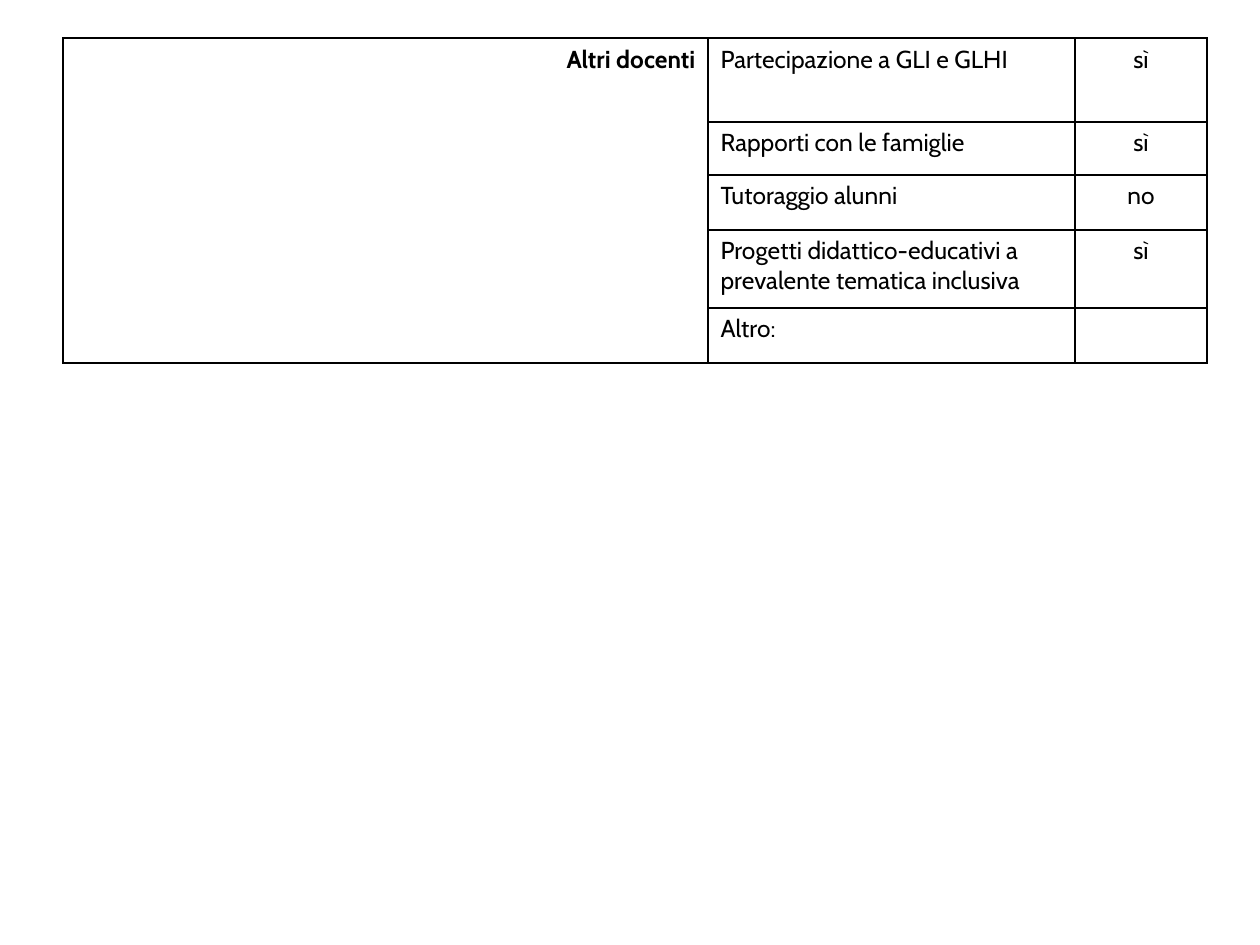
from typing import NamedTuple

from lxml import etree
from pptx import Presentation
from pptx import util as u
from pptx.dml.color import RGBColor
from pptx.enum import text
from pptx.oxml.ns import qn

PX = 914400 // 126  # EMU in one px
INK = "000000"
FONT = "Cabin"
COLUMNS = (645, 367, 132)


class Activity(NamedTuple):
    label: str
    answer: str
    height: int


ACTIVITIES = (
    Activity("Partecipazione a GLI e GLHI", "sì", 84),
    Activity("Rapporti con le famiglie", "sì", 53),
    Activity("Tutoraggio alunni", "no", 55),
    Activity("Progetti didattico-educativi a prevalente tematica inclusiva", "sì", 78),
    Activity("Altro:", "", 55),
)


def px(length: int) -> u.Emu:
    return u.Emu(length * PX)


def color(hex_code: str) -> RGBColor:
    return RGBColor.from_string(hex_code)


def write(cell, words: str, *, align=text.PP_ALIGN.LEFT, bold: bool = False) -> None:
    paragraph = cell.text_frame.paragraphs[0]
    paragraph.alignment = align
    if not words:
        return
    run = paragraph.add_run()
    run.text = words
    run.font.name = FONT
    run.font.size = u.Pt(14)
    run.font.bold = bold
    run.font.color.rgb = color(INK)


def frame(cell) -> None:
    """Clear the fill and rule all four sides of a cell."""
    cell.fill.background()
    properties = cell._tc.get_or_add_tcPr()
    for position, side in enumerate(("lnL", "lnR", "lnT", "lnB")):
        line = etree.Element(qn(f"a:{side}"), w=str(u.Pt(1)))
        fill = etree.SubElement(line, qn("a:solidFill"))
        etree.SubElement(fill, qn("a:srgbClr"), val=INK)
        properties.insert(position, line)


def add_activity_table(slide) -> None:
    height = sum(activity.height for activity in ACTIVITIES)
    table = slide.shapes.add_table(
        len(ACTIVITIES), len(COLUMNS), px(63), px(38), px(sum(COLUMNS)), px(height)
    ).table
    table.first_row = table.horz_banding = False
    for column, width in zip(table.columns, COLUMNS):
        column.width = px(width)
    for cell in table.iter_cells():
        frame(cell)

    # Staff group, spanning all its activities
    group = table.cell(0, 0)
    group.merge(table.cell(len(ACTIVITIES) - 1, 0))
    write(group, "Altri docenti", align=text.PP_ALIGN.RIGHT, bold=True)

    # One row for each activity
    for row, activity in enumerate(ACTIVITIES):
        table.rows[row].height = px(activity.height)
        write(table.cell(row, 1), activity.label)
        write(table.cell(row, 2), activity.answer, align=text.PP_ALIGN.CENTER)


def main() -> None:
    deck = Presentation()
    deck.slide_width, deck.slide_height = px(1260), px(945)
    slide = deck.slides.add_slide(deck.slide_layouts[6])
    add_activity_table(slide)
    deck.save("out.pptx")


if __name__ == "__main__":
    main()
